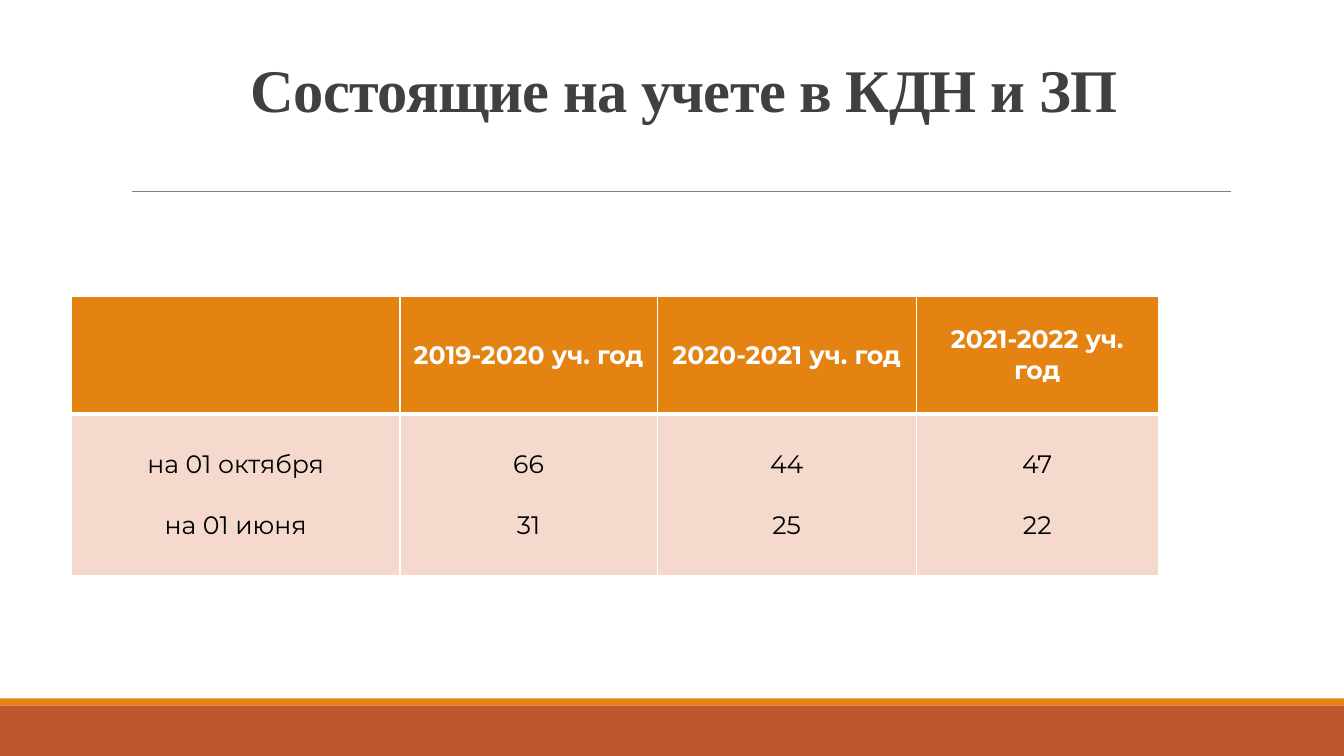
from lxml import etree
from pptx import Presentation
from pptx.dml.color import RGBColor
from pptx.enum.shapes import MSO_CONNECTOR, MSO_SHAPE
from pptx.enum.text import MSO_ANCHOR, MSO_AUTO_SIZE, PP_ALIGN
from pptx.oxml.ns import qn
from pptx.util import Cm, Pt

CENTER = PP_ALIGN.CENTER
MIDDLE = MSO_ANCHOR.MIDDLE
BOTTOM = MSO_ANCHOR.BOTTOM
NO_AUTOFIT = MSO_AUTO_SIZE.NONE
RECTANGLE = MSO_SHAPE.RECTANGLE
STRAIGHT = MSO_CONNECTOR.STRAIGHT

COLORS = {
    "rust": "BD582C",
    "orange": "E48312",
    "peach": "F5D9CC",
    "rule": "808080",
    "title": "404040",
    "white": "FFFFFF",
    "black": "000000",
}
WIDTH, HEIGHT = 33.87, 19.05
TITLE = "Состоящие на учете в КДН и ЗП"
HEADINGS = ["", "2019-2020 уч. год", "2020-2021 уч. год", "2021-2022 уч. год"]
COUNTS = [
    ["на 01 октября", "на 01 июня"],
    ["66", "31"],
    ["44", "25"],
    ["47", "22"],
]
COLUMN_WIDTHS = [8.28, 6.48, 6.53, 6.1]
ROW_HEIGHTS = [2.97, 4.06]


def color(name):
    """Return the named colour."""
    return RGBColor.from_string(COLORS[name])


def style_paragraph(para, font_name, size, color_name, bold):
    """Centre a paragraph and format its runs."""
    para.alignment = CENTER
    for span in para.runs:
        span.font.name = font_name
        span.font.size = Pt(size)
        span.font.bold = bold
        span.font.color.rgb = color(color_name)


def add_footer(page, left, top, width, height):
    """Draw a thin orange stripe above a rust band."""
    stripe = 0.18
    bands = [("orange", top, stripe), ("rust", top + stripe, height - stripe)]
    for fill, band_top, band_height in bands:
        band = page.shapes.add_shape(
            RECTANGLE, Cm(left), Cm(band_top), Cm(width), Cm(band_height))
        band.shadow.inherit = False
        band.fill.solid()
        band.fill.fore_color.rgb = color(fill)
        band.line.fill.background()


def add_title(page, left, top, width, height):
    """Place the title and the rule below it."""
    box = page.shapes.add_textbox(Cm(left), Cm(top), Cm(width), Cm(height))
    frame = box.text_frame
    frame.word_wrap = True
    frame.auto_size = NO_AUTOFIT
    frame.vertical_anchor = BOTTOM
    frame.margin_bottom = Cm(1.78)
    frame.text = TITLE
    para = frame.paragraphs[0]
    para.line_spacing = 0.85
    style_paragraph(para, "Times New Roman", 43.2, "title", True)
    para.runs[0].font._element.set("spc", "-50")

    rule_left, rule_top = left - 0.43, top + 2.52
    rule = page.shapes.add_connector(
        STRAIGHT, Cm(rule_left), Cm(rule_top),
        Cm(rule_left + 27.68), Cm(rule_top))
    rule.line.color.rgb = color("rule")
    rule.line.width = Pt(0.5)
    etree.SubElement(rule._element.spPr, qn("a:effectLst"))


def set_borders(cell, bottom_width):
    """Give a cell white borders, with its own width at the bottom."""
    properties = cell._tc.get_or_add_tcPr()
    widths = {"lnL": 1, "lnR": 1, "lnT": 1, "lnB": bottom_width}
    for side, width in widths.items():
        border = etree.SubElement(
            properties, qn(f"a:{side}"), w=str(Pt(width)))
        fill = etree.SubElement(border, qn("a:solidFill"))
        etree.SubElement(fill, qn("a:srgbClr"), val=COLORS["white"])


def fill_cell(cell, lines, fill, font_color, bold, bottom_width):
    """Write centred lines into a cell and paint it."""
    set_borders(cell, bottom_width)
    cell.fill.solid()
    cell.fill.fore_color.rgb = color(fill)
    cell.vertical_anchor = MIDDLE
    cell.text_frame.text = "\n".join(lines)
    for index, para in enumerate(cell.text_frame.paragraphs):
        para.space_before = Pt(22 if index else 0)
        style_paragraph(para, "Montserrat", 18, font_color, bold)


def add_counts_table(page, left, top, width, height):
    """Place the table of counts by school year."""
    table = page.shapes.add_table(
        len(ROW_HEIGHTS), len(COLUMN_WIDTHS),
        Cm(left), Cm(top), Cm(width), Cm(height)).table
    table.horz_banding = False
    for column, column_width in zip(table.columns, COLUMN_WIDTHS):
        column.width = Cm(column_width)
    for row, row_height in zip(table.rows, ROW_HEIGHTS):
        row.height = Cm(row_height)
    for index, (heading, counts) in enumerate(zip(HEADINGS, COUNTS)):
        fill_cell(table.cell(0, index), [heading], "orange", "white", True, 3)
        fill_cell(table.cell(1, index), counts, "peach", "black", False, 1)


def main():
    """Build the slide and save it."""
    deck = Presentation()
    deck.slide_width, deck.slide_height = Cm(WIDTH), Cm(HEIGHT)
    page = deck.slides.add_slide(deck.slide_layouts[6])
    add_footer(page, 0, 17.6, WIDTH, HEIGHT - 17.6)
    add_title(page, 3.76, 2.31, 26.97, 2.62)
    add_counts_table(page, 1.8, 7.47, sum(COLUMN_WIDTHS), sum(ROW_HEIGHTS))
    deck.save("out.pptx")


if __name__ == "__main__":
    main()
